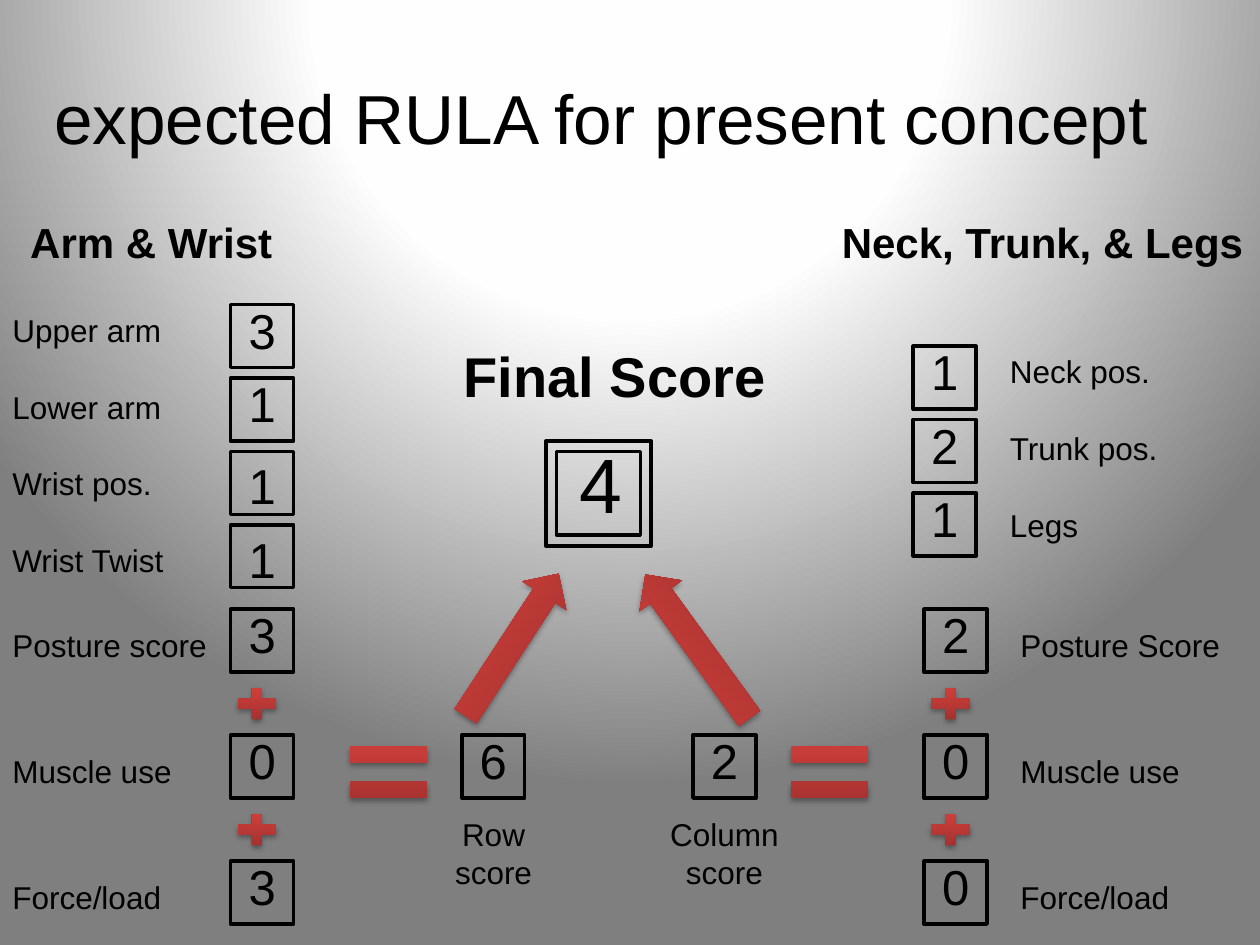
from pptx import Presentation
from pptx.dml.color import RGBColor
from pptx.enum.shapes import MSO_SHAPE as Preset
from pptx.enum.text import MSO_ANCHOR as Anchor, MSO_AUTO_SIZE as AutoSize, PP_ALIGN as Align
from pptx.oxml import parse_xml
from pptx.oxml.ns import nsdecls, qn
from pptx.util import Cm, Pt

# Content: (text, left, top, width, height, size, bold, alignment), in cm and pt
HEADINGS = [
    ("Arm & Wrist", 0.36, 4.24, 7.62, 1.27, 24, True, Align.LEFT),
    ("Neck, Trunk, & Legs", 16.72, 4.24, 9.74, 1.27, 24, True, Align.LEFT),
    ("Final Score", 9.1, 6.77, 6.77, 1.62, 32, True, Align.LEFT),
    ("4", 11.43, 8.68, 1.69, 2.13, 44, False, Align.LEFT),
    ("Row score", 8.68, 16.3, 2.54, 1.8, 18, False, Align.CENTER),
    ("Column score", 12.7, 16.3, 3.81, 1.8, 18, False, Align.CENTER),
]
# Posture parts: labels, scores with their rise above the box top, positions
RISE = 0.21
PARTS = [
    dict(labels=["Upper arm", "Lower arm", "Wrist pos.", "Wrist Twist"],
         scores=[("3", RISE), ("1", RISE), ("1", 0.04), ("1", 0.04)],
         box_left=4.65, label_left=0, top=6.14, label_width=4.87),
    dict(labels=["Neck pos.", "Trunk pos.", "Legs"],
         scores=[("1", RISE), ("2", RISE), ("1", RISE)],
         box_left=18.41, label_left=20.11, top=6.98, label_width=6.98),
]
# Sums of posture, muscle and force scores
SUMS = [
    dict(rows=[("Posture score", "3"), ("Muscle use", "0"), ("Force/load", "3")],
         box_left=4.65, label_left=0, label_width=4.45),
    dict(rows=[("Posture Score", "2"), ("Muscle use", "0"), ("Force/load", "0")],
         box_left=18.63, label_left=20.32, label_width=5.92),
]
TOTALS = [("6", 9.31), ("2", 13.97)]
EQUALS_LEFTS = [6.77, 15.66]
ARROWS = [(8.61, 12.47, 3.43, 303.2), (12.27, 12.5, 3.58, 234.1)]  # left, top, width, rotation
FRAMES = [(11.22, 9.1, 1.69), (11.01, 8.89, 2.12)]  # left, top, side

BOX, PART_STEP = 1.27, 1.48
SUM_TOP, SUM_STEP = 12.28, 2.54
RED_STOPS = [(0, "9C2F2D"), (80, "CB3E3A"), (100, "CE3B37")]
GREY_STOPS = [(0, "FFFFFF"), (40, "FEFEFE"), (100, "7F7F7F")]
UPWARD = '<a:lin ang="16200000" scaled="0"/>'
SPOTLIGHT = ('<a:path path="circle"><a:fillToRect l="50000" t="-80000" '
             'r="50000" b="180000"/></a:path>')
SHADOW = ('<a:outerShdw %s blurRad="40000" dist="23000" dir="5400000" rotWithShape="0">'
          '<a:srgbClr val="000000"><a:alpha val="35000"/></a:srgbClr></a:outerShdw>')


def color(value):
    return RGBColor.from_string(value)


def set_gradient(fill, element, stops, shading):
    fill.gradient()
    marks = "".join(f'<a:gs pos="{position * 1000}"><a:srgbClr val="{value}"/></a:gs>'
                    for position, value in stops)
    gradient = parse_xml(f'<a:gradFill {nsdecls("a")} rotWithShape="1">'
                         f'<a:gsLst>{marks}</a:gsLst>{shading}</a:gradFill>')
    plain = next(element.iter(qn("a:gradFill")))
    plain.getparent().replace(plain, gradient)


def add_text(text, left, top, width, height, size, bold=False,
             alignment=Align.LEFT, anchor=Anchor.TOP, gap=0):
    box = slide.shapes.add_textbox(Cm(left), Cm(top), Cm(width), Cm(height))
    text_frame = box.text_frame
    text_frame.text = text
    text_frame.word_wrap = True
    text_frame.auto_size = AutoSize.SHAPE_TO_FIT_TEXT
    text_frame.vertical_anchor = anchor
    for index, paragraph in enumerate(text_frame.paragraphs):
        paragraph.alignment = alignment
        if index:
            paragraph.space_before = Pt(gap)
        font = paragraph.runs[0].font
        font.name, font.size, font.bold = "Arial", Pt(size), bold
        font.color.rgb = color("000000")


def add_frame(left, top, side=BOX):
    shape = slide.shapes.add_shape(Preset.RECTANGLE, Cm(left), Cm(top), Cm(side), Cm(side))
    shape.shadow.inherit = False
    shape.fill.background()
    shape.line.color.rgb = color("000000")
    shape.line.width = Pt(2)


def add_score(score, left, top, rise=RISE):
    add_frame(left, top)
    add_text(score, left, top - rise, BOX, 1.45, 28, alignment=Align.CENTER)


def add_red(preset, left, top, width, height):
    shape = slide.shapes.add_shape(preset, Cm(left), Cm(top), Cm(width), Cm(height))
    shape.line.fill.background()
    set_gradient(shape.fill, shape.element, RED_STOPS, UPWARD)
    shape.shadow.inherit = False
    effects = next(shape.element.iter(qn("a:effectLst")))
    effects.append(parse_xml(SHADOW % nsdecls("a")))
    return shape


presentation = Presentation()
presentation.slide_width, presentation.slide_height = Cm(25.4), Cm(19.05)
slide = presentation.slides.add_slide(presentation.slide_layouts[6])
set_gradient(slide.background.fill, slide.element, GREY_STOPS, SPOTLIGHT)

# Title and headings
add_text("expected RULA for present concept", 0.69, 0.76, 22.86, 3.18, 39.6,
         alignment=Align.CENTER, anchor=Anchor.MIDDLE)
for heading in HEADINGS:
    add_text(*heading)

# Posture parts
for part in PARTS:
    add_text("\n".join(part["labels"]), part["label_left"], part["top"],
             part["label_width"], PART_STEP * len(part["labels"]), 18, gap=22.3)
    for row, (score, rise) in enumerate(part["scores"]):
        add_score(score, part["box_left"], part["top"] + row * PART_STEP, rise)

# Sums, with a plus sign between the rows
for column in SUMS:
    for row, (label, score) in enumerate(column["rows"]):
        top = SUM_TOP + row * SUM_STEP
        add_text(label, column["label_left"], top + 0.21, column["label_width"], 1.03, 18)
        add_score(score, column["box_left"], top)
        if row:
            add_red(Preset.MATH_PLUS, column["box_left"], top - 1.06, 1.06, 0.85)

# Totals and equals signs
for score, left in TOTALS:
    add_score(score, left, SUM_TOP + SUM_STEP)
for left in EQUALS_LEFTS:
    equals = add_red(Preset.MATH_EQUAL, left, 14.61, 2.12, 1.91)
    equals.adjustments[0], equals.adjustments[1] = 0.17, 0.2

# Final score frame and the arrows to it
for frame in FRAMES:
    add_frame(*frame)
for left, top, width, rotation in ARROWS:
    add_red(Preset.RIGHT_ARROW, left, top, width, 1.06).rotation = rotation

presentation.save("out.pptx")
